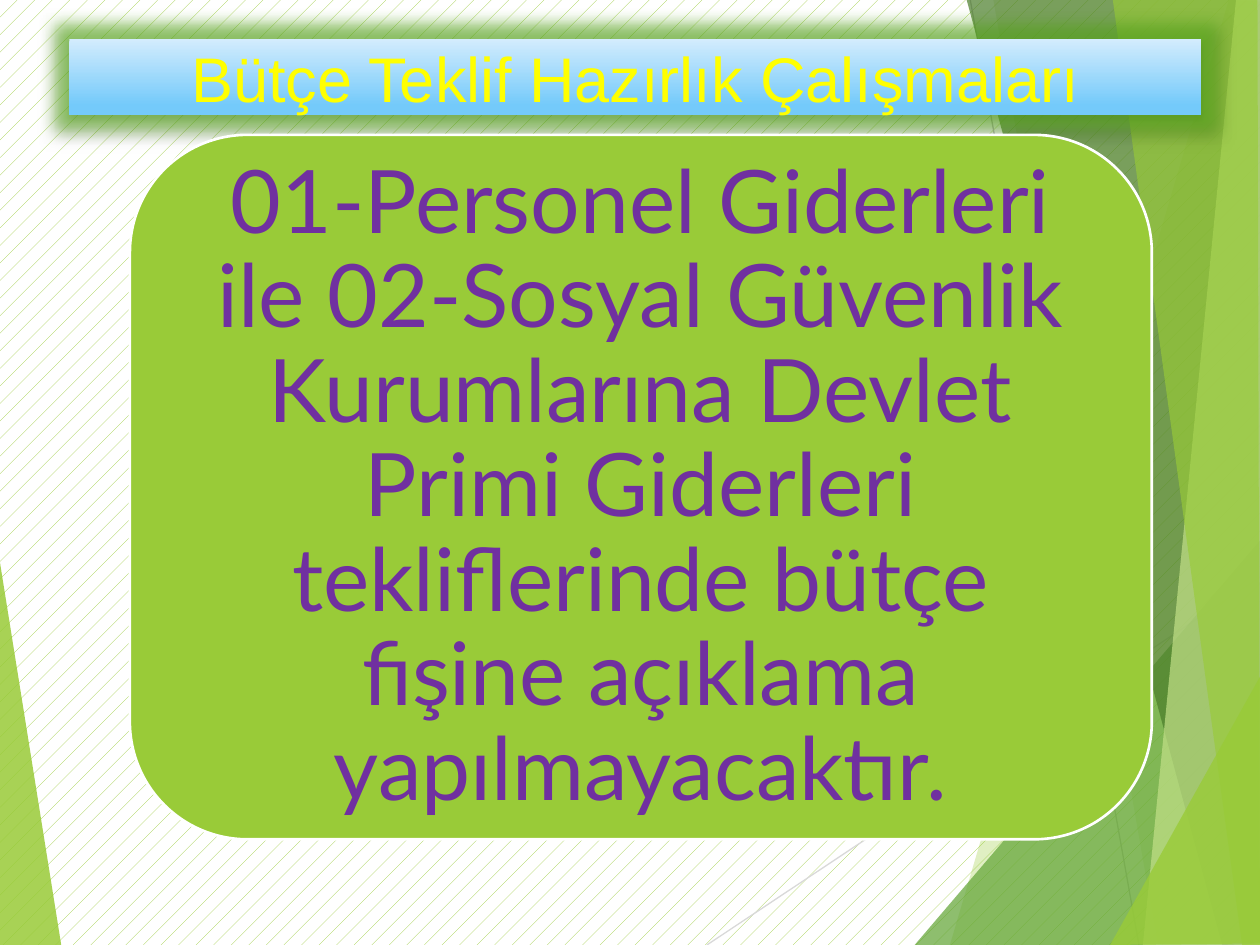
from lxml import etree
from pptx import Presentation
from pptx.dml.color import RGBColor
from pptx.enum import dml, shapes, text
from pptx.oxml import parse_xml
from pptx.oxml.ns import nsdecls, qn
from pptx.util import Cm, Pt

LIME = RGBColor(0x99, 0xCB, 0x38)
PALE_LIME = RGBColor(0xC2, 0xE0, 0x88)
GREEN = RGBColor(0x63, 0xA5, 0x37)
GLOW_GREEN = RGBColor(0x5F, 0xB3, 0x20)
DARK_GREEN = RGBColor(0x4A, 0x7C, 0x29)
LIGHT_GREY = RGBColor(0xD9, 0xD9, 0xD9)
GREY = RGBColor(0xBF, 0xBF, 0xBF)
WHITE = RGBColor(0xFF, 0xFF, 0xFF)
PALE_BLUE = RGBColor(0xD3, 0xEC, 0xFD)
SKY_BLUE = RGBColor(0x74, 0xCA, 0xFA)
YELLOW = RGBColor(0xFF, 0xFF, 0x00)
PURPLE = RGBColor(0x70, 0x30, 0xA0)

prs = Presentation()
prs.slide_width, prs.slide_height = Cm(25.4), Cm(19.05)
s = prs.slides.add_slide(prs.slide_layouts[5])

# Background pattern
fill = s.background.fill
fill.patterned()
fill.pattern = dml.MSO_PATTERN.PERCENT_5
fill.fore_color.rgb = LIME
fill.back_color.rgb = WHITE

# Thin crossing lines
for x1, y1, x2, y2, color in [
    (14.25, 19.05, 25.43, 11.61, LIGHT_GREY),
    (19.56, 0, 22.96, 19.05, GREY),
]:
    line = s.shapes.add_connector(
        shapes.MSO_CONNECTOR.STRAIGHT, Cm(x1), Cm(y1), Cm(x2), Cm(y2))
    line.line.color.rgb = color
    line.line.width = Pt(0.75)
    etree.SubElement(line._element.spPr, qn("a:effectLst"))

# Translucent facets: colour, opacity in percent, corners
facets = [
    (LIME, 85, [(-0.03, 11.15), (1.24, 19.08), (-0.03, 19.05)]),
    (LIME, 30, [(24.77, 0), (19.15, 19.05), (25.45, 19.08), (25.43, 0.03)]),
    (LIME, 20, [(20.02, -0.03), (23.34, 19.05), (25.43, 19.05), (25.43, -0.03)]),
    (GREEN, 72, [(18.44, 19.05), (25.4, 10.9), (25.43, 19.05)]),
    (DARK_GREEN, 70, [(19.48, -0.03), (24.64, 19.05), (25.43, 19.02), (25.43, -0.03)]),
    (PALE_LIME, 70, [(24.92, -0.03), (23.04, 19.05), (25.43, 19.05), (25.4, -0.03)]),
    (LIME, 65, [(22.43, -0.03), (25.04, 19.05), (25.4, 19.05), (25.35, -0.03)]),
    (LIME, 80, [(22.38, 19.05), (25.43, 13.59), (25.43, 19.02)]),
]
for color, opacity, corners in facets:
    points = [(Cm(x), Cm(y)) for x, y in corners]
    builder = s.shapes.build_freeform(*points[0])
    builder.add_line_segments(points[1:])
    sp = builder.convert_to_shape()
    sp.shadow.inherit = False
    sp.line.fill.background()
    sp.fill.solid()
    sp.fill.fore_color.rgb = color
    clr = sp._element.spPr.find(".//" + qn("a:srgbClr"))
    etree.SubElement(clr, qn("a:alpha"), val=str(opacity * 1000))

# Title bar, brought in front of the facets
title = s.shapes.title
s.shapes._spTree.append(title._element)
title.left, title.top, title.width, title.height = Cm(1.4), Cm(0.79), Cm(22.81), Cm(1.52)
title.fill.gradient()
title.fill.gradient_angle = 270
for stop, position, color in zip(
        title.fill.gradient_stops, (0, 0.88), (PALE_BLUE, SKY_BLUE)):
    stop.position = position
    stop.color.rgb = color
title._element.spPr.append(parse_xml(
    f'<a:effectLst {nsdecls("a")}>'
    f'<a:glow rad="228600"><a:srgbClr val="{GLOW_GREEN}"><a:alpha val="60000"/></a:srgbClr></a:glow>'
    '<a:outerShdw blurRad="44450" dist="27940" dir="5400000" algn="ctr">'
    '<a:srgbClr val="000000"><a:alpha val="32000"/></a:srgbClr></a:outerShdw>'
    '</a:effectLst>'))
tf = title.text_frame
tf.text = "Bütçe Teklif Hazırlık Çalışmaları"
tf.auto_size = text.MSO_AUTO_SIZE.NONE
tf.vertical_anchor = text.MSO_ANCHOR.MIDDLE
tf.margin_top = tf.margin_bottom = Cm(0)
p = tf.paragraphs[0]
p.alignment = text.PP_ALIGN.CENTER
p.font.name, p.font.size = "Arial", Pt(36)
p.font.color.rgb = YELLOW

# Rounded panel
panel = s.shapes.add_shape(
    shapes.MSO_SHAPE.ROUNDED_RECTANGLE, Cm(2.62), Cm(2.72), Cm(20.6), Cm(14.2))
panel.shadow.inherit = False
panel.fill.solid()
panel.fill.fore_color.rgb = LIME
panel.line.color.rgb = WHITE
panel.line.width = Pt(1.5)

# Panel text
box = s.shapes.add_textbox(Cm(3.3), Cm(3.43), Cm(19.23), Cm(12.83))
tf = box.text_frame
tf.word_wrap = True
tf.vertical_anchor = text.MSO_ANCHOR.MIDDLE
tf.margin_left = tf.margin_right = Cm(0.53)
tf.margin_top = tf.margin_bottom = Cm(0.25)
p = tf.paragraphs[0]
p.text = ("01-Personel Giderleri ile 02-Sosyal Güvenlik Kurumlarına Devlet Primi "
          "Giderleri tekliflerinde bütçe fişine açıklama yapılmayacaktır.")
p.alignment = text.PP_ALIGN.CENTER
p.line_spacing = 0.9
p.font.name, p.font.size = "Lato", Pt(50)
p.font.color.rgb = PURPLE

prs.save("out.pptx")
